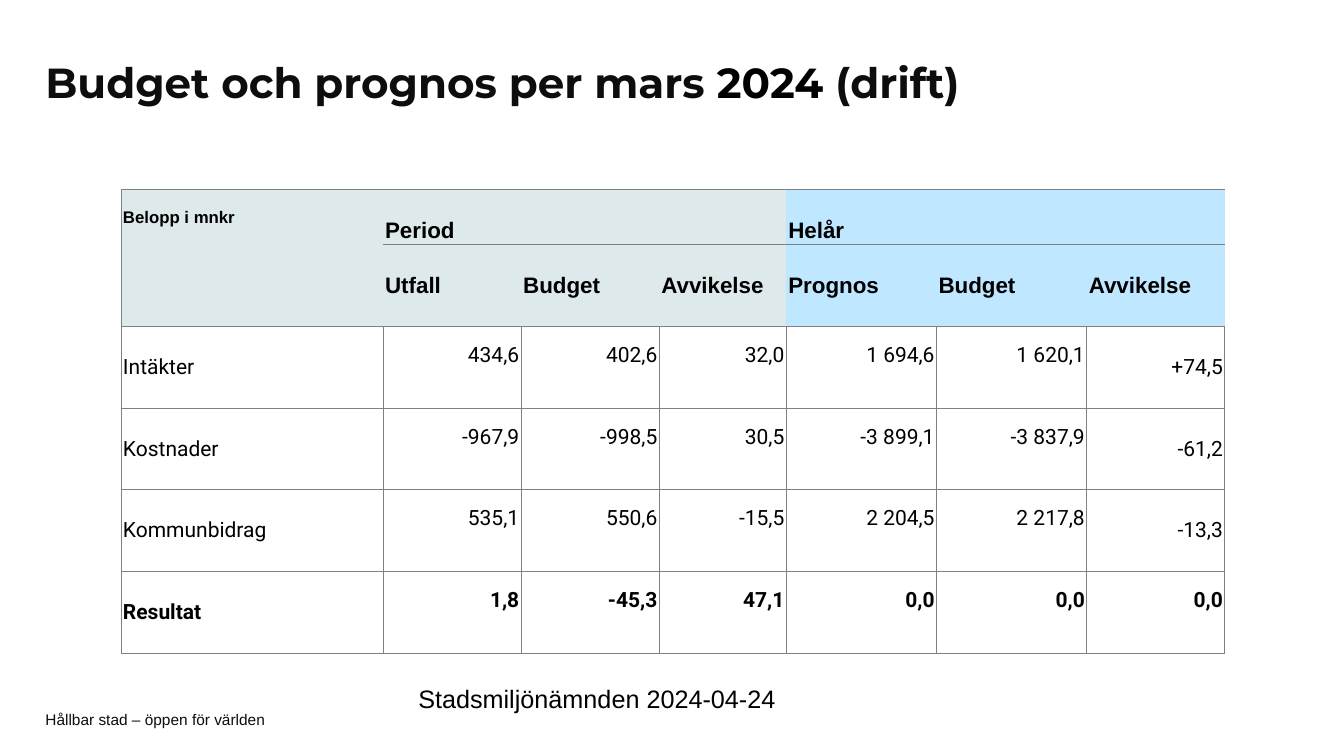
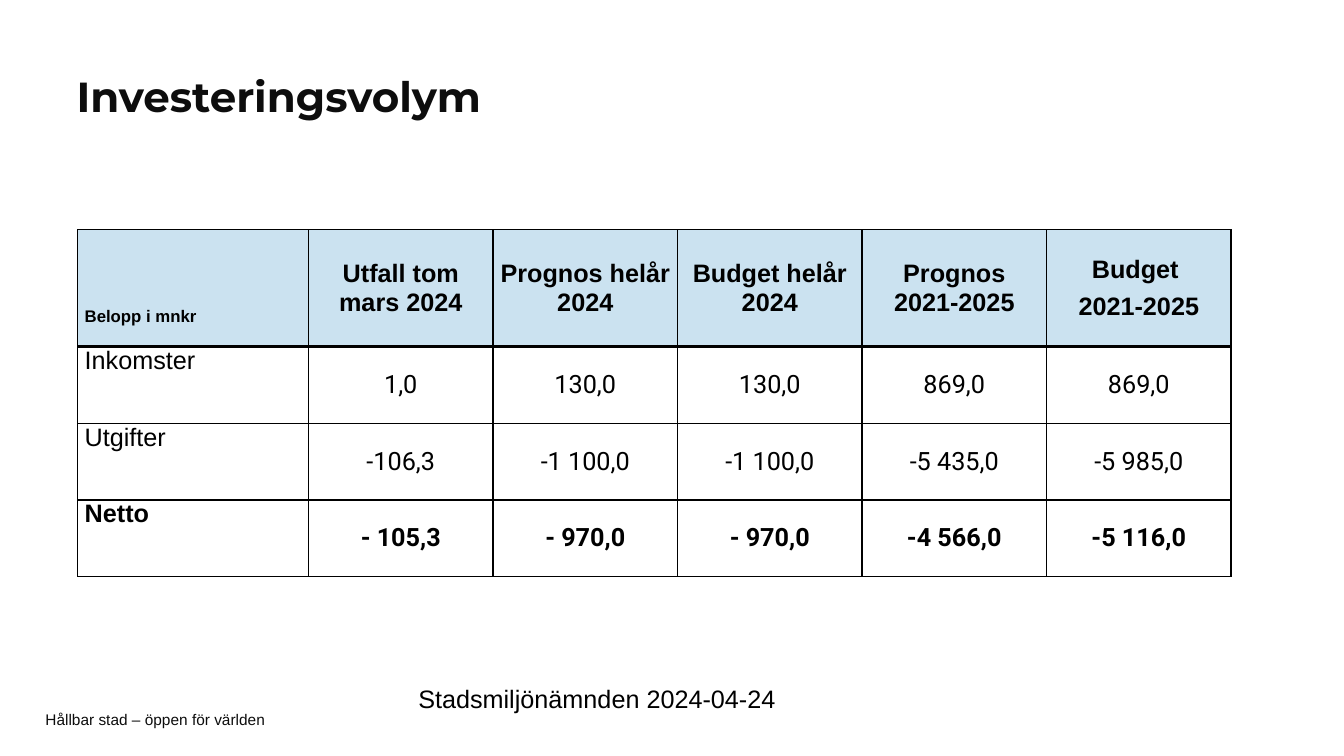
from lxml.etree import SubElement as Sub
from pptx import Presentation
from pptx.dml.color import RGBColor as Rgb
from pptx.enum.text import MSO_ANCHOR as Anchor, MSO_AUTO_SIZE as Fit, PP_ALIGN as Align
from pptx.oxml.ns import qn
from pptx.util import Inches, Pt

HEX = {
    "ink": "0D0D0D", "black": "000000", "white": "FFFFFF", "gray": "808080",
    "mist": "DEE9EC", "sky": "BFE7FF", "ice": "CBE2F0",
}
TITLE = {"size": 30, "font": "Montserrat", "bold": True, "color": "ink",
         "inset": (0, 0.05, 0, 0.05), "lead": 0.9}
THIN = (0.02, 0.02, 0.02, 0.02)
SIDE = (0.07, 0, 0.07, 0)

PERIOD = [
    ["Intäkter", "434,6", "402,6", "32,0", "1 694,6", "1 620,1", "+74,5"],
    ["Kostnader", "-967,9", "-998,5", "30,5", "-3 899,1", "-3 837,9", "-61,2"],
    ["Kommunbidrag", "535,1", "550,6", "-15,5", "2 204,5", "2 217,8", "-13,3"],
    ["Resultat", "1,8", "-45,3", "47,1", "0,0", "0,0", "0,0"],
]
VOLUME = [
    ["Inkomster", "1,0", "130,0", "130,0", "869,0", "869,0"],
    ["Utgifter", "-106,3", "-1 100,0", "-1 100,0", "-5 435,0", "-5 985,0"],
    ["Netto", "- 105,3", "- 970,0", "- 970,0", "-4 566,0", "-5 116,0"],
]


def write(box, text, size=16, font="Arial", color="black", bold=False,
          align=Align.LEFT, anchor=Anchor.MIDDLE, inset=THIN, lead=None, gap=0):
    """Fill a shape or cell; text is a string or a list of (text, colour) runs."""
    frame = box.text_frame
    hold = box if hasattr(box, "vertical_anchor") else frame
    hold.vertical_anchor = anchor
    (hold.margin_left, hold.margin_top,
     hold.margin_right, hold.margin_bottom) = map(Inches, inset)
    frame.word_wrap = True
    lines = text.split("\n") if isinstance(text, str) else [text]
    for i, line in enumerate(lines):
        para = frame.add_paragraph() if i else frame.paragraphs[0]
        para.alignment = align
        para.space_before = Pt(gap if i else 0)
        if lead:
            para.line_spacing = lead
        for part, tone in [(line, color)] if isinstance(line, str) else line:
            run = para.add_run()
            run.text = part
            run.font.size, run.font.name, run.font.bold = Pt(size), font, bold
            run.font.color.rgb = Rgb.from_string(HEX[tone])


def paint(cell, fill, color, **edges):
    """Set the fill and the four edges (points, 0 for none) of a cell."""
    props = cell._tc.get_or_add_tcPr()
    for side in "LRTB":
        width = edges.get(side, 0)
        line = Sub(props, qn("a:ln" + side), w=str(Pt(width)))
        if width:
            solid = Sub(line, qn("a:solidFill"))
            Sub(solid, qn("a:srgbClr"), val=HEX[color])
        else:
            Sub(line, qn("a:noFill"))
    cell.fill.solid()
    cell.fill.fore_color.rgb = Rgb.from_string(HEX[fill])


def grid(slide, left, top, cols, rows):
    box = (left, top, sum(cols), sum(rows))
    table = slide.shapes.add_table(len(rows), len(cols), *map(Inches, box)).table
    for col, width in zip(table.columns, cols):
        col.width = Inches(width)
    for row, height in zip(table.rows, rows):
        row.height = Inches(height)
    return table


def label(slide, box, text, **form):
    write(slide.shapes.add_textbox(*map(Inches, box)), text, **form)


def start(deck, title, left, top):
    """Add a slide with its title and the shared footers."""
    slide = deck.slides.add_slide(deck.slide_layouts[5])
    head = slide.shapes.title
    head.left, head.top, head.width, head.height = map(Inches, (left, top, 10.03, 0.81))
    write(head, title, **TITLE)
    head.text_frame.auto_size = Fit.NONE
    label(slide, (0.45, 7.06, 9.45, 0.16), "Hållbar stad – öppen för världen",
          size=11, color="ink", inset=(0, 0, 0, 0))
    label(slide, (4.05, 6.73, 3.91, 0.4), "Stadsmiljönämnden 2024-04-24",
          size=18, anchor=Anchor.TOP, inset=(0.1, 0.05, 0.1, 0.05))
    return slide


def budget(slide, left, top):
    cols = [2.6, 1.37, 1.37, 1.26, 1.49, 1.49, 1.37]
    table = grid(slide, left, top, cols, [0.55] + [0.81] * 5)
    wide = 0.75

    # Two header rows
    for r in range(2):
        for c in range(len(cols)):
            edges = {"T": wide, "B": wide}
            if c == 0:
                edges = {"L": wide, "B" if r else "T": wide}
            paint(table.cell(r, c), "sky" if c > 3 else "mist", "gray", **edges)
    write(table.cell(0, 0), "Belopp i mnkr", size=12, bold=True)
    for c, name in ((1, "Period"), (4, "Helår")):
        table.cell(0, c).merge(table.cell(0, c + 2))
        write(table.cell(0, c), name, bold=True, anchor=Anchor.BOTTOM)
    names = ["Utfall", "Budget", "Avvikelse", "Prognos", "Budget", "Avvikelse"]
    for c, name in enumerate(names, 1):
        write(table.cell(1, c), name, bold=True)

    # Figures sit above the middle, except the last column of the plain rows
    for r, row in enumerate(PERIOD, 2):
        total = row is PERIOD[-1]
        for c, text in enumerate(row):
            cell = table.cell(r, c)
            paint(cell, "white", "gray", **dict.fromkeys("LRTB", wide))
            high = 0 < c < 6 or (total and c == 6)
            write(cell, text, size=15, font="Roboto", bold=total,
                  align=Align.RIGHT if c else Align.LEFT,
                  inset=(0.02, 0.02, 0.02, 0.26) if high else THIN)


def invest(slide, left, top):
    table = grid(slide, left, top, [2.29] + [1.83] * 5, [1.16] + [0.76] * 3)

    # Header row
    names = ["Belopp i mnkr", "Utfall tom mars 2024", "Prognos helår 2024",
             "Budget helår 2024", "Prognos 2021-2025", "Budget \n2021-2025"]
    for c, name in enumerate(names):
        cell = table.cell(0, c)
        paint(cell, "ice", "black", L=1, R=1, T=1, B=2.25)
        if c:
            write(cell, name, size=18, bold=True, align=Align.CENTER, inset=SIDE, gap=6)
        else:
            write(cell, name, size=12, bold=True, anchor=Anchor.BOTTOM,
                  inset=(0.07, 0, 0.07, 0.21))

    # Body rows
    for r, row in enumerate(VOLUME, 1):
        total = row is VOLUME[-1]
        for c, text in enumerate(row):
            cell = table.cell(r, c)
            paint(cell, "white", "black", L=1, R=1, T=2.25 if r == 1 else 1, B=1)
            if c:
                write(cell, text, size=18, font="Roboto", bold=total, align=Align.CENTER)
            else:
                write(cell, text, size=18, bold=total, anchor=Anchor.TOP, inset=SIDE)


def main():
    deck = Presentation()
    deck.slide_width, deck.slide_height = Inches(13.33), Inches(7.5)
    title = [("Budget och prognos per mars", "ink"), (" 2024 ", "black"), ("(drift)", "ink")]
    budget(start(deck, title, 0.45, 0.44), 1.2, 1.88)
    invest(start(deck, "Investeringsvolym", 0.76, 0.58), 0.77, 2.28)
    deck.save("out.pptx")


if __name__ == "__main__":
    main()
